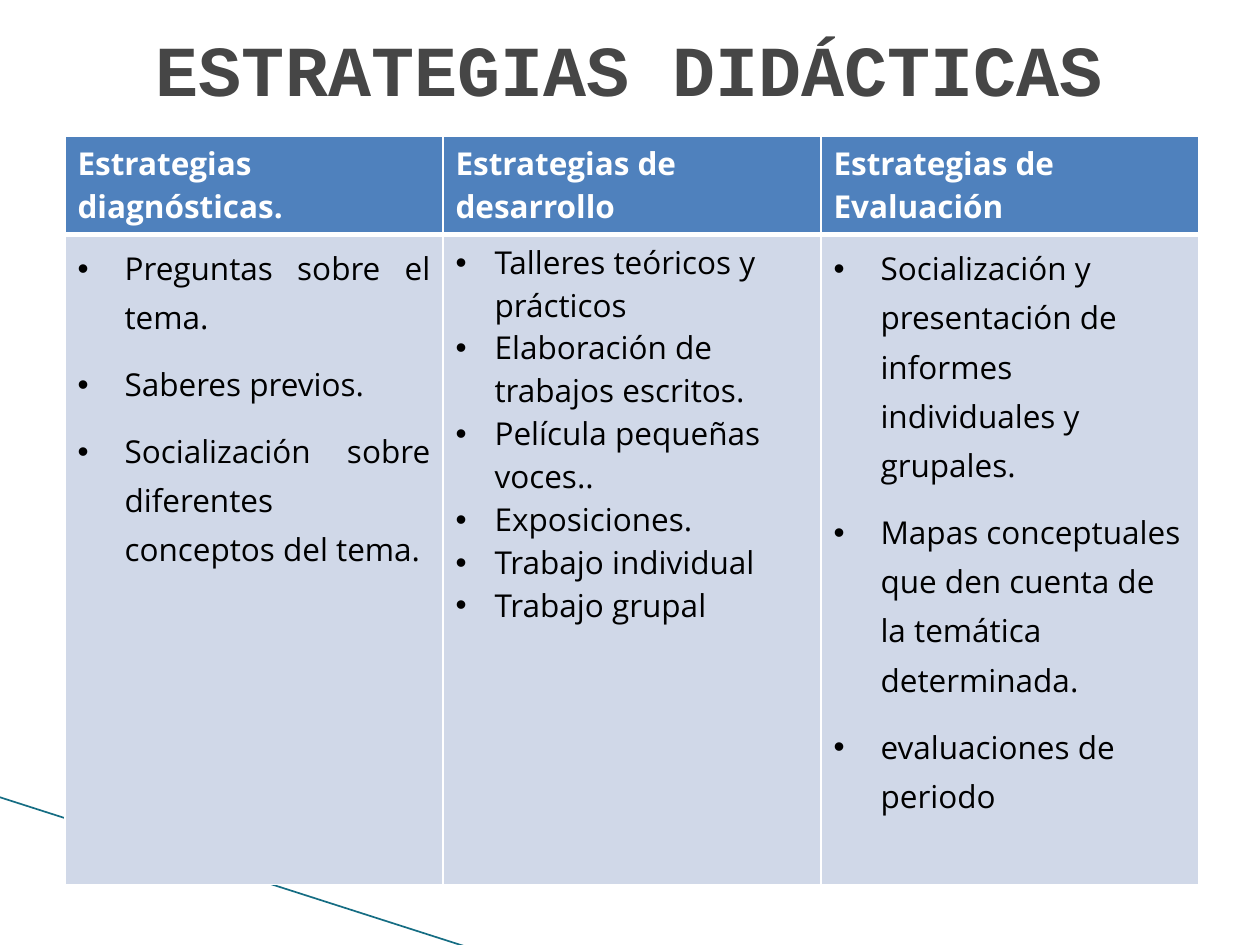
from lxml.etree import SubElement
from pptx import Presentation
from pptx.dml.color import RGBColor
from pptx.enum.shapes import MSO_CONNECTOR
from pptx.enum.text import MSO_ANCHOR, MSO_AUTO_SIZE, PP_ALIGN
from pptx.oxml import parse_xml
from pptx.oxml.ns import nsdecls, qn
from pptx.util import Pt

PX = 914400 / 126


def px(num):
    return round(num * PX)


def tint(font, code):
    font.color.rgb = RGBColor.from_string(code)


deck = Presentation()
deck.slide_width, deck.slide_height = px(1260), px(945)
slide = deck.slides.add_slide(deck.slide_layouts[5])

title = slide.shapes.title
title.left, title.top, title.width, title.height = px(63), px(0), px(1134), px(135)
frame = title.text_frame
frame.word_wrap = True
frame.auto_size = MSO_AUTO_SIZE.NONE
frame.vertical_anchor = MSO_ANCHOR.MIDDLE
para = frame.paragraphs[0]
para.alignment = PP_ALIGN.CENTER
run = para.add_run()
run.text = "ESTRATEGIAS DIDÁCTICAS"
run.font.name, run.font.size, run.font.bold = "Courier New", Pt(41), True
tint(run.font, "464646")

line = slide.shapes.add_connector(MSO_CONNECTOR.STRAIGHT, px(-1), px(797), px(467), px(947))
line.line.width = Pt(0.95)
tint(line.line, "156D83")
SubElement(line._element.spPr, qn("a:effectLst"))

heads = ["Estrategias diagnósticas.", "Estrategias de desarrollo", "Estrategias de Evaluación"]
lists = [
    ["Preguntas sobre el tema.", "Saberes previos.",
     "Socialización sobre diferentes conceptos del tema."],
    ["Talleres teóricos y prácticos", "Elaboración de trabajos escritos.",
     "Película pequeñas voces..", "Exposiciones.", "Trabajo individual", "Trabajo grupal"],
    ["Socialización y presentación de informes individuales y grupales.",
     "Mapas conceptuales que den cuenta de la temática determinada.",
     "evaluaciones de periodo"],
]
aligns = [PP_ALIGN.JUSTIFY, PP_ALIGN.LEFT, PP_ALIGN.LEFT]
loose = [True, False, True]
rows = [[[head] for head in heads], lists]
fills = ["4F81BD", "D0D8E8"]
inks = ["FFFFFF", "000000"]
edges = [{"L": 1, "R": 1, "T": 1, "B": 3}, {"L": 1, "R": 1, "T": 3, "B": 1}]

table = slide.shapes.add_table(2, 3, px(65), px(136), px(1134), px(747)).table
table.horz_banding = False
for col in table.columns:
    col.width = px(378)
table.rows[0].height, table.rows[1].height = px(97), px(650)

for r, row in enumerate(rows):
    for c, texts in enumerate(row):
        cell = table.cell(r, c)
        cell.fill.solid()
        cell.fill.fore_color.rgb = RGBColor.from_string(fills[r])
        props = cell._tc.get_or_add_tcPr()
        for spot, (side, width) in enumerate(edges[r].items()):
            props.insert(spot, parse_xml(
                f'<a:ln{side} {nsdecls("a")} w="{Pt(width)}"><a:solidFill>'
                f'<a:srgbClr val="FFFFFF"/></a:solidFill></a:ln{side}>'))
        for i, text in enumerate(texts):
            para = cell.text_frame.paragraphs[0] if i == 0 else cell.text_frame.add_paragraph()
            if r == 1:
                indent = px(47 if loose[c] else 39)
                form = para._p.get_or_add_pPr()
                form.set("marL", str(indent))
                form.set("indent", str(-indent))
                SubElement(form, qn("a:buFont"), typeface="Arial")
                SubElement(form, qn("a:buChar"), char="•")
                para.alignment = aligns[c]
                if loose[c]:
                    tabs = SubElement(form, qn("a:tabLst"))
                    SubElement(tabs, qn("a:tab"), pos=str(px(63)), algn="l")
                    para.line_spacing = 1.15
                    para.space_after = Pt(10)
            run = para.add_run()
            run.text = text
            run.font.name, run.font.size, run.font.bold = "Open Sans", Pt(18), r == 0
            tint(run.font, inks[r])

deck.save("out.pptx")
